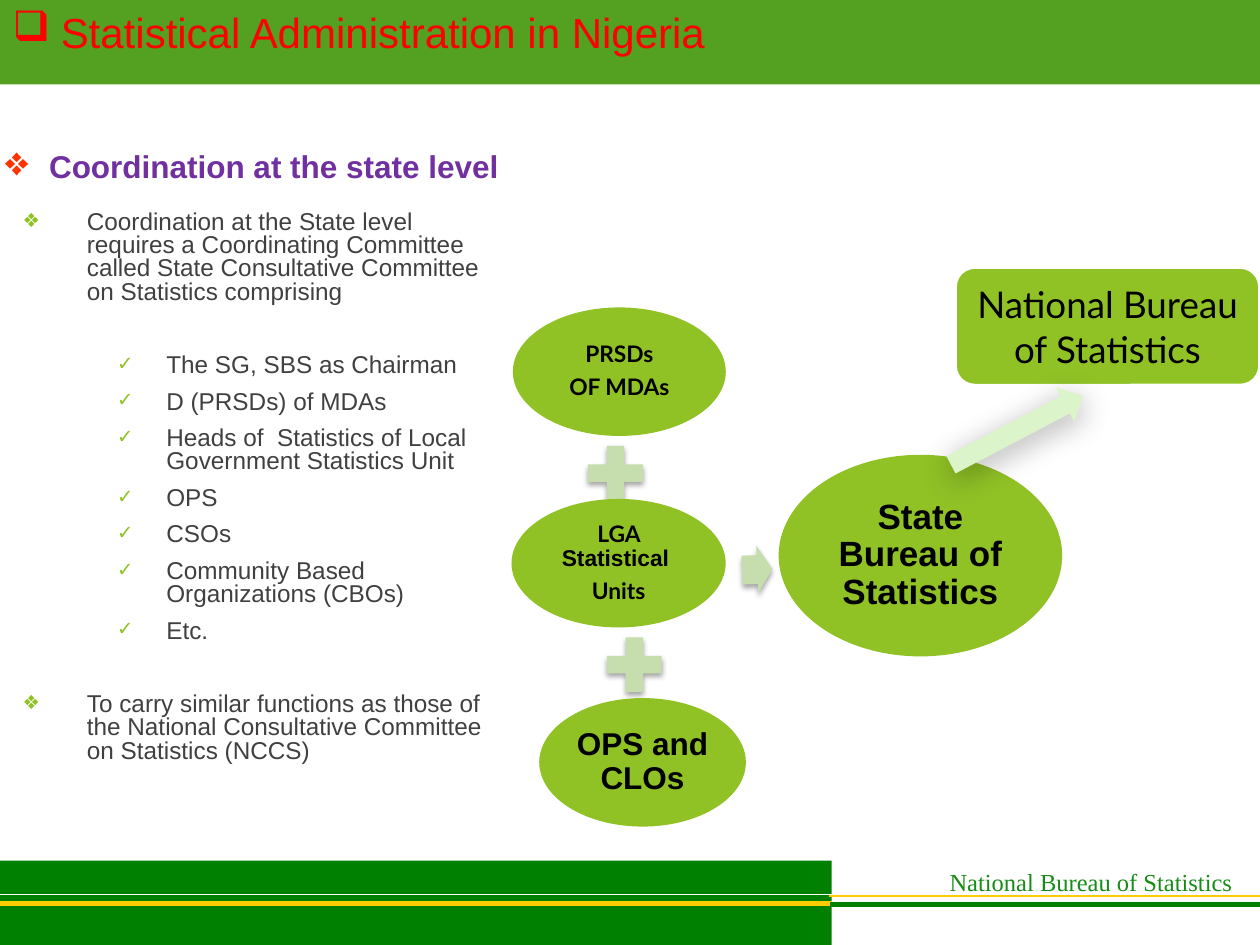
from lxml import etree
from pptx import Presentation
from pptx.dml.color import RGBColor
from pptx.enum.shapes import MSO_CONNECTOR, MSO_SHAPE
from pptx.enum.text import MSO_ANCHOR, MSO_AUTO_SIZE, PP_ALIGN
from pptx.oxml.ns import qn
from pptx.util import Inches, Pt

ELLIPSE, PLUS = MSO_SHAPE.OVAL, MSO_SHAPE.MATH_PLUS
ARROW, ROUNDED = MSO_SHAPE.RIGHT_ARROW, MSO_SHAPE.ROUNDED_RECTANGLE
RECT, STRAIGHT = MSO_SHAPE.RECTANGLE, MSO_CONNECTOR.STRAIGHT
TOP, MIDDLE = MSO_ANCHOR.TOP, MSO_ANCHOR.MIDDLE
LEFT, CENTER = PP_ALIGN.LEFT, PP_ALIGN.CENTER
NO_FIT = MSO_AUTO_SIZE.NONE

WHITE = RGBColor(0xFF, 0xFF, 0xFF)
BLACK = RGBColor(0x00, 0x00, 0x00)
GRAY = RGBColor(0x40, 0x40, 0x40)
RED = RGBColor(0xFF, 0x00, 0x00)
ORANGE = RGBColor(0xFF, 0x33, 0x00)
PURPLE = RGBColor(0x70, 0x30, 0xA0)
GOLD = RGBColor(0xFF, 0xCC, 0x00)
BANNER_GREEN = RGBColor(0x54, 0xA0, 0x21)
FOOTER_GREEN = RGBColor(0x00, 0x80, 0x00)
FOOTER_TEXT = RGBColor(0x17, 0x8C, 0x17)
LIME = RGBColor(0x90, 0xC2, 0x26)
PALE_GREEN = RGBColor(0xC6, 0xDD, 0xAD)
MINT = RGBColor(0xDB, 0xF4, 0xCA)


def set_bullet(p, char, margin=0, hanging=0, color=None, percent=100):
    pPr = p._p.get_or_add_pPr()
    pPr.set("marL", str(Inches(margin)))
    pPr.set("indent", str(-Inches(hanging)))
    if color is not None:
        clr = etree.SubElement(pPr, qn("a:buClr"))
        etree.SubElement(clr, qn("a:srgbClr"), val=str(color))
    etree.SubElement(pPr, qn("a:buSzPct"), val=str(percent * 1000))
    etree.SubElement(pPr, qn("a:buChar"), char=char)


def add_run(p, text, font, size, color, bold=False):
    r = p.add_run()
    r.text = text
    r.font.name, r.font.size, r.font.bold = font, Pt(size), bold
    r.font.color.rgb = color


prs = Presentation()
prs.slide_width, prs.slide_height = Inches(10), Inches(7.5)
s = prs.slides.add_slide(prs.slide_layouts[1])

# Footer band, rules and name
band = s.shapes.add_shape(RECT, Inches(0), Inches(6.83), Inches(6.6), Inches(0.67))
band.shadow.inherit = False
band.fill.solid()
band.fill.fore_color.rgb = FOOTER_GREEN
band.line.fill.background()

for x1, x2, y, color, width in [
    (0, 6.6, 7.17, GOLD, 3),
    (6.58, 10, 7.11, GOLD, 1),
    (6.59, 10, 7.18, FOOTER_GREEN, 3),
    (0, 6.6, 7.1, WHITE, 1),
]:
    rule = s.shapes.add_connector(STRAIGHT, Inches(x1), Inches(y), Inches(x2), Inches(y))
    rule.line.color.rgb, rule.line.width = color, Pt(width)
    etree.SubElement(rule._element.spPr, qn("a:effectLst"))

footer = s.shapes.add_textbox(Inches(7.41), Inches(6.83), Inches(2.5), Inches(0.28))
tf = footer.text_frame
tf.word_wrap = True
tf.margin_left = tf.margin_right = Inches(0)
p = tf.paragraphs[0]
p.alignment = CENTER
add_run(p, "National Bureau of Statistics", "Times New Roman", 14, FOOTER_TEXT)

# Title banner
title = s.shapes.title
title.left, title.top, title.width, title.height = Inches(0), Inches(0), Inches(10), Inches(0.67)
title.fill.solid()
title.fill.fore_color.rgb = BANNER_GREEN
tf = title.text_frame
tf.auto_size, tf.vertical_anchor = NO_FIT, TOP
p = tf.paragraphs[0]
p.alignment = LEFT
set_bullet(p, "❑")
add_run(p, " ", "Lato", 24, RED)
add_run(p, "Statistical Administration in Nigeria", "Arial", 24, RED)

# Committee list: (level, space before, text)
body = s.placeholders[1]
body.left, body.top, body.width, body.height = Inches(0.08), Inches(1.63), Inches(3.92), Inches(4.62)
tf = body.text_frame
tf.auto_size, tf.vertical_anchor = NO_FIT, TOP
GAP, SECTION_GAP = 7.5, 28.6
BULLETS = {0: ("❖", 0.51, 0.51), 2: ("✓", 1.14, 0.39)}
for i, (level, space, text) in enumerate([
    (0, 0, "Coordination at the State level requires a Coordinating Committee "
           "called State Consultative Committee on Statistics comprising"),
    (2, SECTION_GAP, "The SG, SBS as Chairman"),
    (2, GAP, "D (PRSDs) of MDAs"),
    (2, GAP, "Heads of  Statistics of Local Government Statistics Unit"),
    (2, GAP, "OPS"),
    (2, GAP, "CSOs"),
    (2, GAP, "Community Based Organizations (CBOs)"),
    (2, GAP, "Etc."),
    (0, SECTION_GAP, "To carry similar functions as those of the National "
                     "Consultative Committee on Statistics (NCCS)"),
]):
    p = tf.paragraphs[0] if i == 0 else tf.add_paragraph()
    p.level, p.line_spacing, p.space_before = level, 0.8, Pt(space)
    set_bullet(p, *BULLETS[level], LIME, 80)
    add_run(p, text, "Arial", 13.9, GRAY)

# Section heading
heading = s.shapes.add_textbox(Inches(-0.03), Inches(1), Inches(6.45), Inches(0.63))
tf = heading.text_frame
tf.word_wrap, tf.vertical_anchor = True, MIDDLE
tf.margin_left = tf.margin_right = Inches(0.07)
tf.margin_top = tf.margin_bottom = Inches(0.04)
p = tf.paragraphs[0]
set_bullet(p, "❖", 0.28, 0.28, percent=130)
add_run(p, " ", "Arial", 18, ORANGE, True)
add_run(p, "Coordination at the state level", "Arial", 18, PURPLE, True)

# Diagram bodies: shape, box, inset, paragraphs of (text, font, size) runs
for kind, box, inset, paragraphs in [
    (ELLIPSE, (4.07, 2.44, 1.69, 1.02), 0.02, [[("PRSDs", "Lato", 13)], [("OF MDAs", "Lato", 13)]]),
    (PLUS, (4.59, 3.46, 0.59, 0.59), 0, []),
    (ELLIPSE, (4.06, 3.96, 1.7, 1.02), 0.02,
     [[("LGA ", "Lato", 13), ("Statistical ", "Arial", 13)], [("Units", "Lato", 13)]]),
    (PLUS, (4.74, 4.98, 0.59, 0.59), 0, []),
    (ELLIPSE, (4.28, 5.54, 1.64, 1.02), 0.03, [[("OPS and CLOs", "Arial", 18)]]),
    (ELLIPSE, (6.18, 3.61, 2.25, 1.6), 0.03, [[("State Bureau of Statistics", "Arial", 20)]]),
    (ROUNDED, (7.58, 2.12, 2.42, 0.94), 0.1, [[("National Bureau of Statistics", "Lato", 21)]]),
    (ARROW, (5.89, 4.33, 0.24, 0.38), 0, []),
    (ARROW, (7.48, 3.26, 1.18, 0.31), 0, []),
]:
    sp = s.shapes.add_shape(kind, *[Inches(v) for v in box])
    sp.shadow.inherit = False
    sp.fill.solid()
    sp.fill.fore_color.rgb = LIME if paragraphs else PALE_GREEN
    sp.line.fill.background()
    if kind == ROUNDED:
        sp.line.color.rgb, sp.line.width = WHITE, Pt(2)
    blur, distance, direction, alpha = 3, 2, 90, 35
    if kind == ARROW:
        sp.rotation = 357.7
        sp.adjustments[0] = 0.6
        if box[2] > 1:
            sp.rotation, sp.adjustments[0] = 332.3, 0.5
            sp.fill.fore_color.rgb = MINT
            blur, distance, direction, alpha = 17.8, 4, 87, 33
    if not paragraphs:
        effects = sp._element.spPr.find(qn("a:effectLst"))
        shadow = etree.SubElement(effects, qn("a:outerShdw"), blurRad=str(Pt(blur)),
                                  dist=str(Pt(distance)), dir=str(direction * 60000))
        shade = etree.SubElement(shadow, qn("a:srgbClr"), val=str(BLACK))
        etree.SubElement(shade, qn("a:alpha"), val=str(alpha * 1000))
    tf = sp.text_frame
    tf.word_wrap, tf.vertical_anchor = True, MIDDLE
    tf.margin_left = tf.margin_right = Inches(inset)
    tf.margin_top = tf.margin_bottom = Inches(min(inset, 0.05))
    for i, runs in enumerate(paragraphs):
        p = tf.paragraphs[0] if i == 0 else tf.add_paragraph()
        p.alignment = CENTER
        if kind == ELLIPSE:
            p.line_spacing, p.space_after = 0.9, Pt(4.5)
        for text, font, size in runs:
            add_run(p, text, font, size, BLACK, kind == ELLIPSE)

prs.save("out.pptx")
